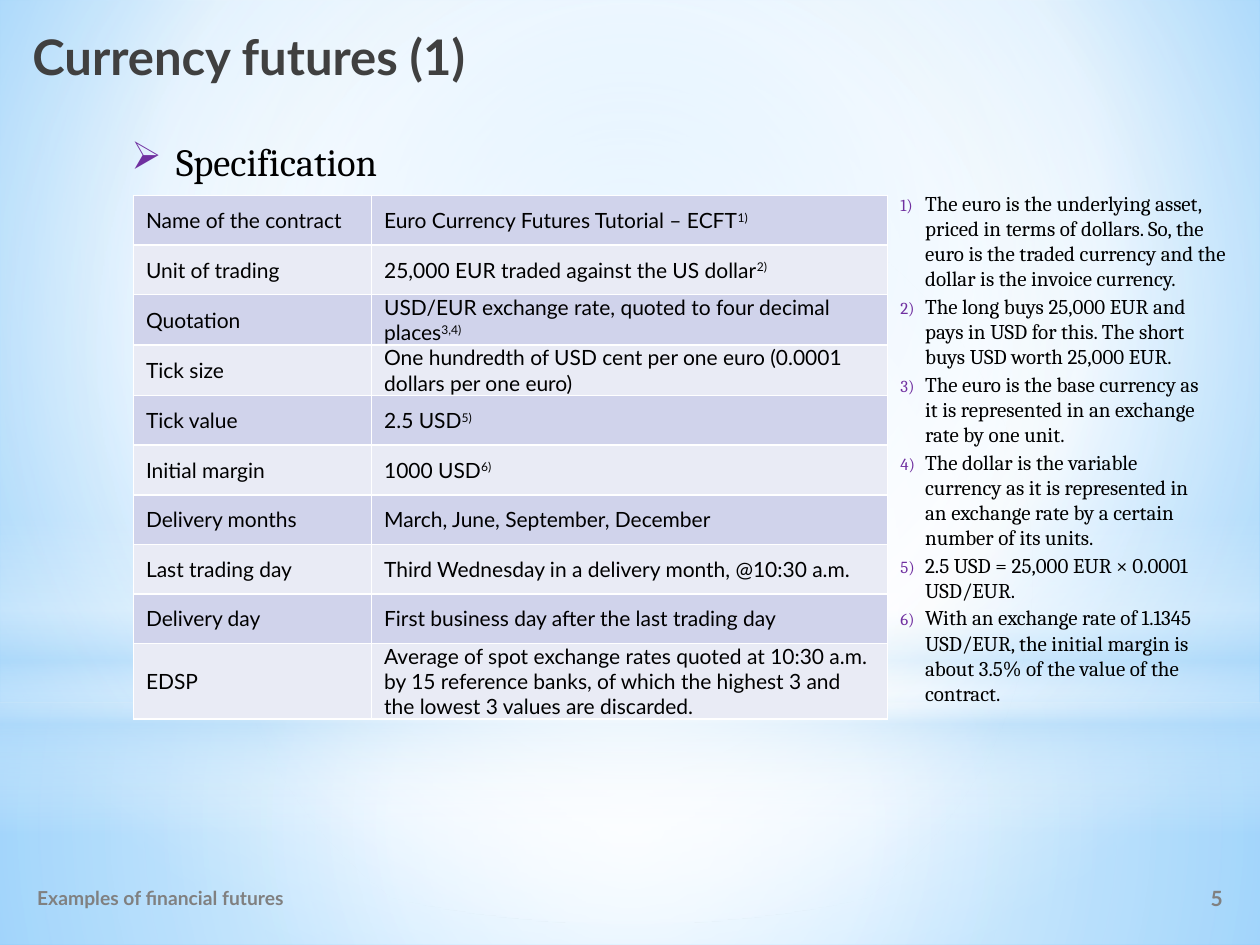
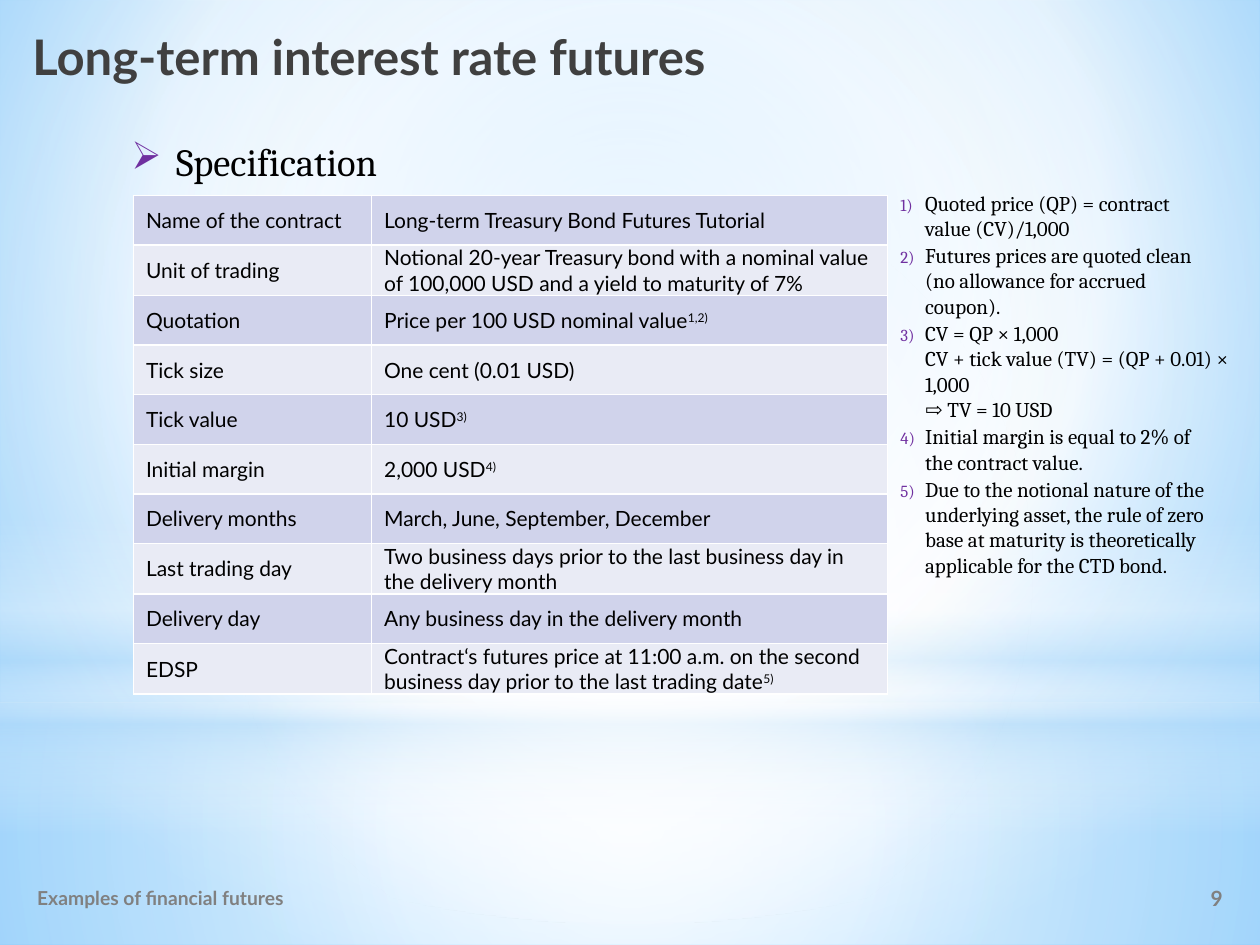
from pptx import Presentation
from pptx import util as u
from pptx.dml.color import RGBColor
from pptx.enum import shapes, text
from pptx.oxml import parse_xml
from pptx.oxml.ns import nsdecls, qn

COLORS = {"title": "404040", "body": "000000", "footer": "808080",
          "bullet": "7030A0", "odd": "D0D3EB", "even": "E9EBF5",
          "border": "FFFFFF"}

FORMATS = {
    "title": {"size": u.Pt(28), "name": "Lato", "bold": True},
    "footer": {"size": u.Pt(11), "name": "Lato", "bold": True},
    "number": {"size": u.Pt(12), "name": "Lato", "bold": True},
    "heading": {"size": u.Pt(22), "name": "Cambria"},
    "note": {"size": u.Pt(12), "name": "Cambria"},
    "cell": {"size": u.Pt(12), "name": "Lato"},
}

# Text after ^ is superscript
LABELS = ["Name of the contract", "Unit of trading", "Quotation", "Tick size",
          "Tick value", "Initial margin", "Delivery months",
          "Last trading day", "Delivery day", "EDSP"]

# Each note: width in cm, lines it takes, text
SLIDES = [
    {"title": "Currency futures (1)", "title_width": 12.3, "number": "5",
     "values": [
         "Euro Currency Futures Tutorial – ECFT^1)",
         "25,000 EUR traded against the US dollar^2)",
         "USD/EUR exchange rate, quoted to four decimal places^3,4)",
         "One hundredth of USD cent per one euro (0.0001 dollars per one euro)",
         "2.5 USD^5)",
         "1000 USD^6)",
         "March, June, September, December",
         "Third Wednesday in a delivery month, @10:30 a.m.",
         "First business day after the last trading day",
         "Average of spot exchange rates quoted at 10:30 a.m. by 15 reference "
         "banks, of which the highest 3 and the lowest 3 values are discarded."],
     "notes": [
         (7.1, 4, "The euro is the underlying asset, priced in terms of dollars. "
                  "So, the euro is the traded currency and the dollar is the "
                  "invoice currency."),
         (7.1, 3, "The long buys 25,000 EUR and pays in USD for this. The short "
                  "buys USD worth 25,000 EUR."),
         (6.8, 3, "The euro is the base currency as it is represented in an "
                  "exchange rate by one unit."),
         (6.8, 4, "The dollar is the variable currency as it is represented in "
                  "an exchange rate by a certain number of its units."),
         (6.8, 2, "2.5 USD = 25,000 EUR × 0.0001 USD/EUR."),
         (7.1, 4, "With an exchange rate of 1.1345 USD/EUR, the initial margin "
                  "is about 3.5% of the value of the contract.")]},
    {"title": "Long-term interest rate futures", "title_width": 18.3, "number": "9",
     "values": [
         "Long-term Treasury Bond Futures Tutorial",
         "Notional 20-year Treasury bond with a nominal value of 100,000 USD "
         "and a yield to maturity of 7%",
         "Price per 100 USD nominal value^1,2)",
         "One cent (0.01 USD)",
         "10 USD^3)",
         "2,000 USD^4)",
         "March, June, September, December",
         "Two business days prior to the last business day in the delivery month",
         "Any business day in the delivery month",
         "Contract‘s futures price at 11:00 a.m. on the second business day "
         "prior to the last trading date^5)"],
     "notes": [
         (6.8, 2, "Quoted price (QP) = contract value (CV)/1,000"),
         (6.8, 3, "Futures prices are quoted clean (no allowance for accrued "
                  "coupon)."),
         (7.4, 4, "CV = QP × 1,000\nCV + tick value (TV) = (QP + 0.01) × 1,000\n"
                  "⇨ TV = 10 USD"),
         (6.8, 2, "Initial margin is equal to 2% of the contract value."),
         (6.8, 4, "Due to the notional nature of the underlying asset, the rule "
                  "of zero base at maturity is theoretically applicable for the "
                  "CTD bond.")]},
]

# Stops are (position, colour, opacity) in percent
BACKGROUND = [(0, "9ED5FF", 100), (60, "FFFFFF", 100), (100, "5BB9FF", 100)]
CENTRE = (50, 50, 50, 50)
BACKDROP = [
    ("RECTANGLE", (0, 14.17, 25.4, 4.88), CENTRE,
     [(0, "FFFFFF", 91), (37, "FFFFFF", 76), (100, "B4DCFA", 79)]),
    ("RECTANGLE", (0, 0, 25.4, 14.17), CENTRE,
     [(0, "FFFFFF", 89), (48, "FFFFFF", 62), (100, "B4DCFA", 79)]),
    ("RECTANGLE", (0, 10.46, 25.4, 6.35), None,
     [(0, "FFFFFF", 0), (29, "FFFFFF", 30), (45, "B4DCFA", 40),
      (55, "FFFFFF", 26), (65, "B4DCFA", 60), (100, "FFFFFF", 0)]),
    ("OVAL", (0, 4.45, 25.4, 14.17), CENTRE,
     [(0, "FFFFFF", 100), (56, "FFFFFF", 0)]),
]


def set_gradient(props, stops, focus):
    """Swap the solid fill in props for a circular gradient, or a vertical one without focus."""
    gs = "".join(f'<a:gs pos="{pos * 1000}"><a:srgbClr val="{color}">'
                 f'<a:alpha val="{alpha * 1000}"/></a:srgbClr></a:gs>'
                 for pos, color, alpha in stops)
    if focus:
        sides = " ".join(f'{side}="{v * 1000}"' for side, v in zip("ltrb", focus))
        course = f'<a:path path="circle"><a:fillToRect {sides}/></a:path>'
    else:
        course = '<a:lin ang="5400000" scaled="0"/>'
    props.replace(props.find(qn("a:solidFill")), parse_xml(
        f'<a:gradFill {nsdecls("a")} rotWithShape="1"><a:gsLst>{gs}</a:gsLst>'
        f'{course}</a:gradFill>'))


def write(tf, content, kind, color="body", bullet=None, indent=0):
    """Fill a text frame; the bullet (XML tags) marks only the first paragraph."""
    tf.word_wrap = True
    for i, line in enumerate(content.split("\n")):
        p = tf.paragraphs[0] if i == 0 else tf.add_paragraph()
        if bullet:
            pPr = p._p.get_or_add_pPr()
            pPr.set("marL", str(u.Cm(indent)))
            pPr.set("indent", str(0 if i else -u.Cm(indent)))
            if i == 0:
                pPr.extend(parse_xml(
                    f'<a:pPr {nsdecls("a")}><a:buClr><a:srgbClr '
                    f'val="{COLORS["bullet"]}"/></a:buClr>{bullet}</a:pPr>'))
        base, _, mark = line.partition("^")
        for part in filter(None, (base, mark)):
            r = p.add_run()
            r.text = part
            for name, value in FORMATS[kind].items():
                setattr(r.font, name, value)
            r.font.color.rgb = RGBColor.from_string(COLORS[color])
            if part is mark:
                r._r.get_or_add_rPr().set("baseline", "30000")


prs = Presentation()
prs.slide_width, prs.slide_height = u.Cm(25.4), u.Cm(19.05)
layout = prs.slide_layouts[5]
master = prs.slide_master
master.background.fill.solid()
set_gradient(master.element.find(".//" + qn("p:bgPr")), BACKGROUND, (20, 10, 20, 60))

for n, data in enumerate(SLIDES):
    s = prs.slides.add_slide(layout)

    # The backdrop is drawn once and moved behind everything on the master
    if n == 0:
        for i, (shape, box, focus, stops) in enumerate(BACKDROP):
            sp = s.shapes.add_shape(getattr(shapes.MSO_SHAPE, shape), *map(u.Cm, box))
            sp.shadow.inherit = False
            sp.line.fill.background()
            sp.fill.solid()
            set_gradient(sp.element.spPr, stops, focus)
            sp.element.nvSpPr.cNvPr.set("id", str(100 + i))
            master.shapes.element.insert(2 + i, sp.element)

    for box, content, kind, align in (
            ((0.5, 17.6, 9.2, 1), "Examples of financial futures", "footer", "LEFT"),
            ((19.9, 17.6, 5, 1), data["number"], "number", "RIGHT")):
        tf = s.shapes.add_textbox(*map(u.Cm, box)).text_frame
        tf.vertical_anchor = text.MSO_ANCHOR.MIDDLE
        write(tf, content, kind, "footer")
        tf.paragraphs[0].alignment = getattr(text.PP_ALIGN, align)

    title = s.shapes.title
    title.left, title.top = u.Cm(0.4), u.Cm(0.4)
    title.width, title.height = u.Cm(data["title_width"]), u.Cm(1.8)
    title.text_frame.vertical_anchor = text.MSO_ANCHOR.TOP
    write(title.text_frame, data["title"], "title", "title")
    title.text_frame.paragraphs[0].alignment = text.PP_ALIGN.LEFT

    tf = s.shapes.add_textbox(u.Cm(2.4), u.Cm(2.65), u.Cm(10.3), u.Cm(1.2)).text_frame
    write(tf, "Specification", "heading", bullet='<a:buChar char="➢"/>', indent=0.9)

    table = s.shapes.add_table(len(LABELS), 2, u.Cm(2.69), u.Cm(3.94),
                               u.Cm(15.2), u.Cm(10)).table
    table.first_row = table.horz_banding = False
    for column, width in zip(table.columns, (4.8, 10.4)):
        column.width = u.Cm(width)
    for i, row in enumerate(zip(LABELS, data["values"])):
        table.rows[i].height = u.Cm(1)
        for j, content in enumerate(row):
            cell = table.cell(i, j)
            cell.margin_top = cell.margin_bottom = 0
            cell.vertical_anchor = text.MSO_ANCHOR.MIDDLE
            write(cell.text_frame, content, "cell")
            tcPr = cell._tc.get_or_add_tcPr()
            for side in "LRTB":
                tcPr.append(parse_xml(
                    f'<a:ln{side} {nsdecls("a")} w="12700"><a:solidFill><a:srgbClr '
                    f'val="{COLORS["border"]}"/></a:solidFill></a:ln{side}>'))
            cell.fill.solid()
            cell.fill.fore_color.rgb = RGBColor.from_string(
                COLORS["even" if i % 2 else "odd"])

    top = 3.71
    for i, (width, lines, content) in enumerate(data["notes"], 1):
        tf = s.shapes.add_textbox(u.Cm(17.9), u.Cm(top), u.Cm(width),
                                  u.Cm(0.51 * lines + 0.28)).text_frame
        write(tf, content, "note", indent=0.5,
              bullet='<a:buSzPct val="80000"/>'
                     f'<a:buAutoNum type="arabicParenR" startAt="{i}"/>')
        tf.auto_size = text.MSO_AUTO_SIZE.SHAPE_TO_FIT_TEXT
        top += 0.51 * lines + 0.04

prs.save("out.pptx")
